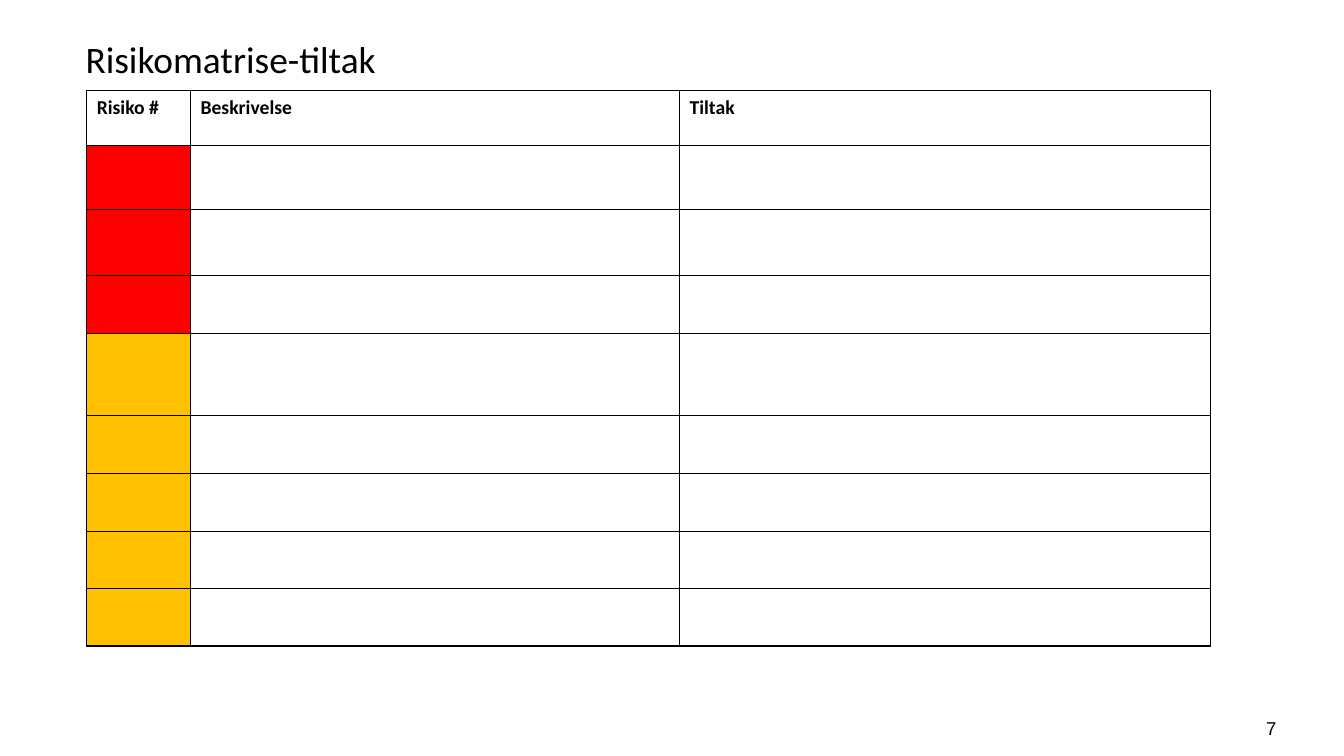
from dataclasses import dataclass

from lxml.etree import SubElement
from pptx import Presentation
from pptx.dml.color import RGBColor
from pptx.enum.text import MSO_ANCHOR as Anchor, PP_ALIGN as Align
from pptx.oxml.ns import qn
from pptx.slide import Slide
from pptx.table import _Cell as Cell
from pptx.text.text import _Paragraph as Para
from pptx.util import Inches, Pt

BLACK, WHITE, RED, AMBER = "000000", "FFFFFF", "FF0000", "FFC000"
HEADS = ("Risiko #", "Beskrivelse", "Tiltak")
WIDTHS = (1.03, 4.85, 5.27)


@dataclass
class Row:
    height: float
    fill: str
    texts: tuple[str, ...] = ("", "", "")


@dataclass
class Label:
    text: str
    box: tuple[float, float, float, float]
    size: float
    font: str
    align: Align = Align.LEFT
    spacing: float = 1.0


ROWS = [Row(0.54, WHITE, HEADS)]
ROWS += [Row(height, RED) for height in (0.64, 0.65, 0.58)]
ROWS += [Row(height, AMBER) for height in (0.81, 0.58, 0.57, 0.57, 0.57)]

LABELS = [
    Label("Risikomatrise-tiltak", (0.75, 0.35, 11.84, 0.51), 26.7, "Calibri", spacing=0.9),
    Label("7", (12.36, 7.02, 0.5, 0.4), 13.3, "Arial", Align.CENTER),
]


def color(code: str) -> RGBColor:
    return RGBColor.from_string(code)


def style(para: Para, size: float, name: str, bold: bool = False) -> None:
    font = para.font
    font.size, font.name, font.bold = Pt(size), name, bold
    font.color.rgb = color(BLACK)


def add_label(slide: Slide, label: Label) -> None:
    frame = slide.shapes.add_textbox(*map(Inches, label.box)).text_frame
    frame.word_wrap = True
    frame.vertical_anchor = Anchor.MIDDLE
    para = frame.paragraphs[0]
    para.text = label.text
    para.alignment, para.line_spacing = label.align, label.spacing
    style(para, label.size, label.font)


def add_edges(cell: Cell) -> None:
    """Draw a thin black line on all four sides; call before the cell is filled."""
    props = cell._tc.get_or_add_tcPr()
    for side in ("lnL", "lnR", "lnT", "lnB"):
        line = SubElement(props, qn(f"a:{side}"), w=str(Pt(1)))
        fill = SubElement(line, qn("a:solidFill"))
        SubElement(fill, qn("a:srgbClr"), val=BLACK)


def add_risks(slide: Slide) -> None:
    height = sum(row.height for row in ROWS)
    box = map(Inches, (0.86, 0.9, sum(WIDTHS), height))
    table = slide.shapes.add_table(len(ROWS), len(WIDTHS), *box).table
    table.horz_banding = False
    for col, width in zip(table.columns, WIDTHS):
        col.width = Inches(width)
    for line, row in zip(table.rows, ROWS):
        line.height = Inches(row.height)
        for cell, text, fill in zip(line.cells, row.texts, (row.fill, WHITE, WHITE)):
            add_edges(cell)
            cell.fill.solid()
            cell.fill.fore_color.rgb = color(fill)
            para = cell.text_frame.paragraphs[0]
            if text:
                para.text = text
            style(para, 14, "Calibri", bold=bool(text))


def main() -> None:
    deck = Presentation()
    deck.slide_width, deck.slide_height = Inches(13.33), Inches(7.5)
    slide = deck.slides.add_slide(deck.slide_layouts[6])
    add_risks(slide)
    for label in LABELS:
        add_label(slide, label)
    deck.save("out.pptx")


if __name__ == "__main__":
    main()
